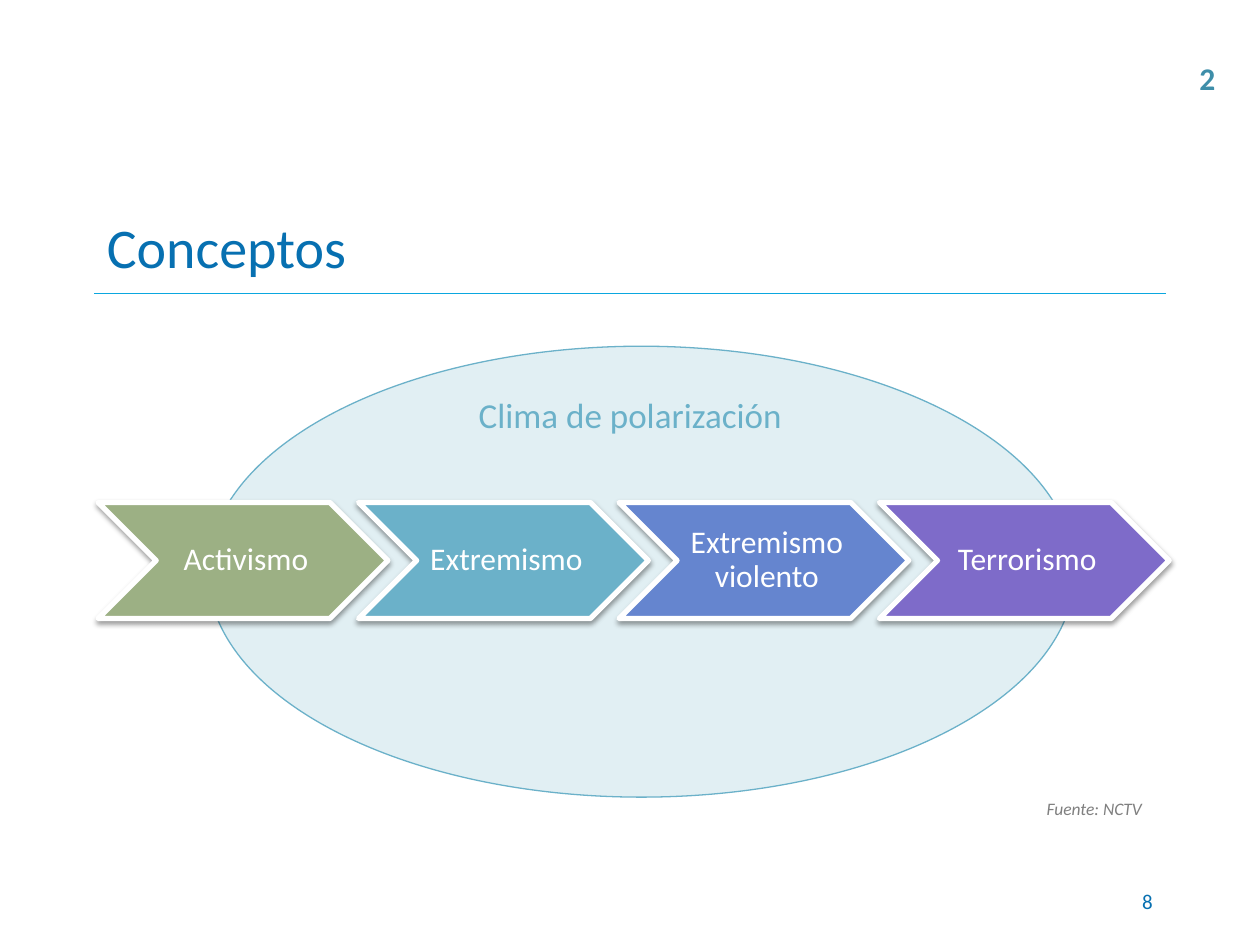
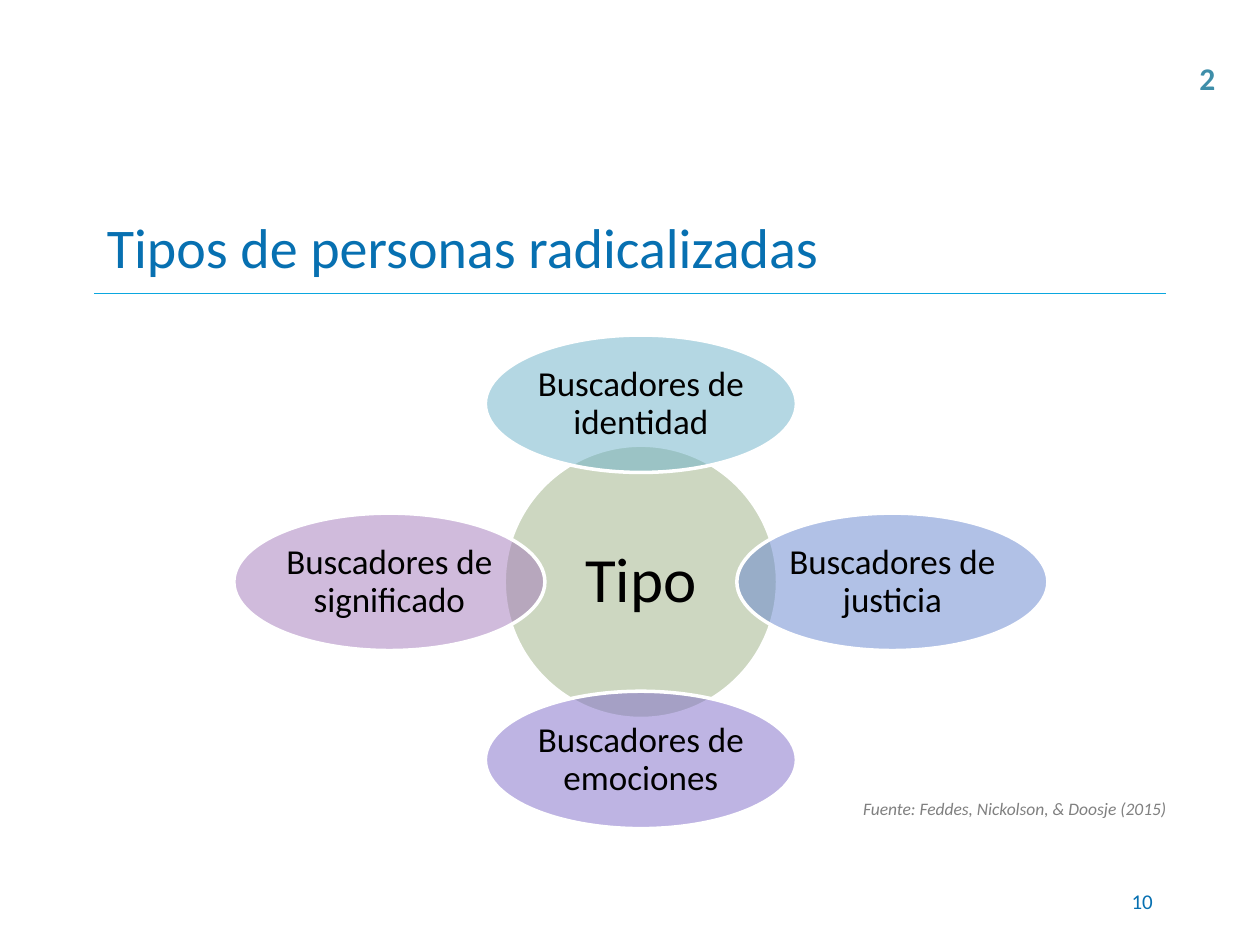
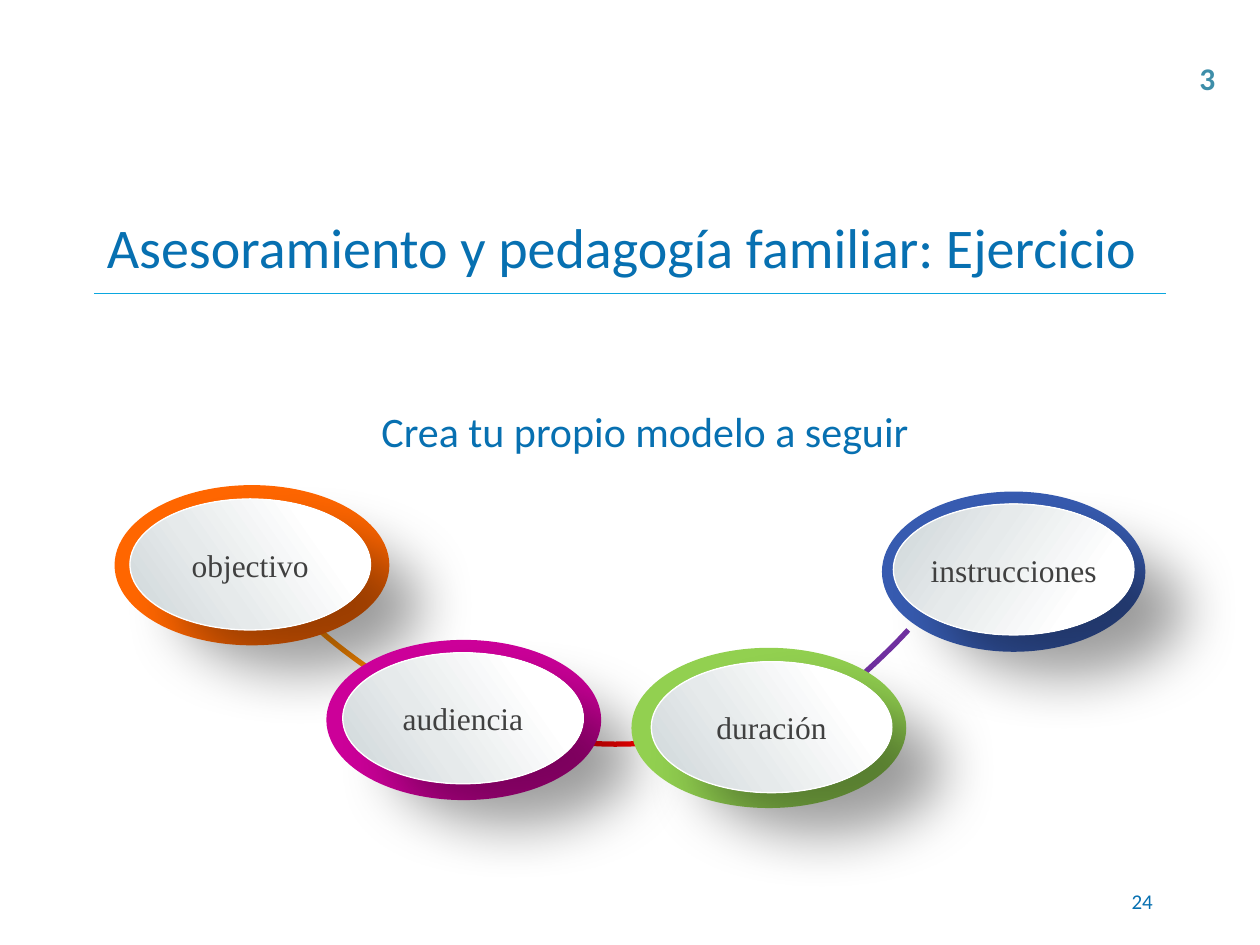
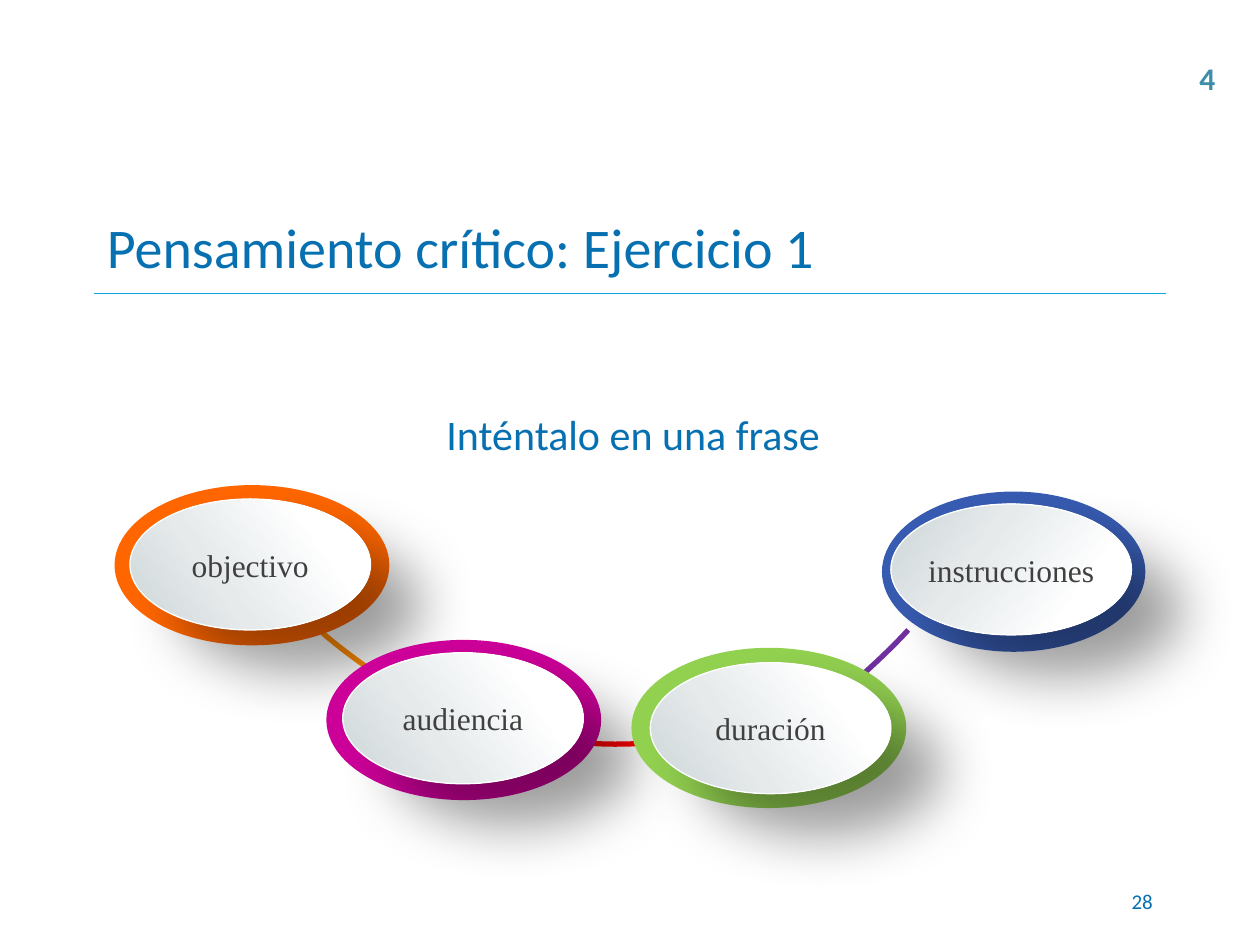
"""Builds four slides on concepts, types of radicalised people and two exercises."""
from lxml.etree import SubElement
from pptx import Presentation
from pptx.dml.color import RGBColor
from pptx.enum.shapes import MSO_CONNECTOR, MSO_SHAPE
from pptx.enum.text import MSO_ANCHOR, PP_ALIGN
from pptx.oxml.ns import qn
from pptx.util import Cm, Pt

TITLE_BLUE = RGBColor(0x07, 0x70, 0xB1)
RULE_BLUE = RGBColor(0x0B, 0xA7, 0xDF)
SECTION_BLUE = RGBColor(0x3E, 0x8E, 0xA9)
PALE_BLUE = RGBColor(0xC4, 0xE0, 0xE9)
GREEN = RGBColor(0x9C, 0xB0, 0x84)
TEAL = RGBColor(0x6B, 0xB1, 0xC9)
INDIGO = RGBColor(0x65, 0x85, 0xCF)
VIOLET = RGBColor(0x7E, 0x6B, 0xC9)
MAUVE = RGBColor(0xA3, 0x79, 0xBB)
WHITE = RGBColor(0xFF, 0xFF, 0xFF)
BLACK = RGBColor(0x00, 0x00, 0x00)
SOURCE_GREY = RGBColor(0x80, 0x80, 0x80)
LABEL_GREY = RGBColor(0x40, 0x40, 0x40)
SILVER = RGBColor(0xCD, 0xD5, 0xD8)
LIGHT_SILVER = RGBColor(0xE6, 0xEA, 0xEB)
NAVY = RGBColor(0x37, 0x5B, 0xB0)
ORANGE = RGBColor(0xFF, 0x66, 0x00)
MAGENTA = RGBColor(0xCC, 0x00, 0x99)
LIME = RGBColor(0x92, 0xD0, 0x50)
PURPLE = RGBColor(0x70, 0x30, 0xA0)
RED = RGBColor(0xFF, 0x00, 0x00)
AMBER = RGBColor(0xFF, 0x8A, 0x00)


def write(shape, text, size, color, align=PP_ALIGN.LEFT, font="Calibri", insets=None, spacing=None):
    """Put one formatted paragraph into a shape and return it."""
    frame = shape.text_frame
    frame.text = text
    if insets:
        frame.word_wrap = True
        frame.vertical_anchor = MSO_ANCHOR.MIDDLE
        frame.margin_left, frame.margin_top, frame.margin_right, frame.margin_bottom = map(Cm, insets)
    paragraph = frame.paragraphs[0]
    paragraph.alignment = align
    if spacing:
        paragraph.line_spacing = spacing
    run_font = paragraph.runs[0].font
    run_font.name, run_font.size, run_font.color.rgb = font, Pt(size), color
    return paragraph


def paint(shape, fill, line=None, width=0.75, opacity=None, shadow=None):
    """Set fill, outline and an optional (blur, distance, angle) shadow."""
    shape.shadow.inherit = False
    if fill is not None:
        shape.fill.solid()
        shape.fill.fore_color.rgb = fill
    if opacity:
        tone = shape._element.spPr.find(qn("a:solidFill")).find(qn("a:srgbClr"))
        SubElement(tone, qn("a:alpha"), val=str(opacity * 1000))
    if line is None:
        shape.line.fill.background()
    else:
        shape.line.color.rgb = line
        shape.line.width = Pt(width)
    if shadow:
        blur, distance, angle = shadow
        effects = shape._element.spPr.find(qn("a:effectLst"))
        outer = SubElement(effects, qn("a:outerShdw"), blurRad=str(Pt(blur)), dist=str(Pt(distance)),
                           dir=str(angle * 60000), algn="tl", rotWithShape="0")
        tone = SubElement(outer, qn("a:srgbClr"), val="000000")
        SubElement(tone, qn("a:alpha"), val="38000")


deck = Presentation()
deck.slide_width, deck.slide_height = Cm(25.4), Cm(19.05)
layout = deck.slide_layouts[5]
heading = layout.placeholders[0]
heading.left, heading.top, heading.width, heading.height = Cm(1.9), Cm(4.01), Cm(21.6), Cm(1.9)
heading.text_frame.vertical_anchor = MSO_ANCHOR.MIDDLE

slides = []
for title, section, number in [
    ("Conceptos", "2", "8"),
    ("Tipos de personas radicalizadas", "2", "10"),
    ("Asesoramiento y pedagogía familiar: Ejercicio", "3", "24"),
    ("Pensamiento crítico: Ejercicio 1", "4", "28"),
]:
    slide = deck.slides.add_slide(layout)
    write(slide.shapes.title, title, 32, TITLE_BLUE)
    page = slide.shapes.add_textbox(Cm(18.21), Cm(17.65), Cm(5.28), Cm(1.02))
    page.text_frame.vertical_anchor = MSO_ANCHOR.MIDDLE
    write(page, number, 12, TITLE_BLUE, PP_ALIGN.RIGHT)
    marker = slide.shapes.add_textbox(Cm(23.93), Cm(1.07), Cm(0.84), Cm(1.02))
    marker.text_frame.word_wrap = False
    write(marker, section, 18, SECTION_BLUE).runs[0].font.bold = True
    slides.append(slide)
concepts, types, family, critical = slides

rule = concepts.shapes.add_connector(MSO_CONNECTOR.STRAIGHT, Cm(1.9), Cm(5.92), Cm(23.5), Cm(5.92))
rule.line.color.rgb = RULE_BLUE
rule.line.width = Pt(0.75)
SubElement(rule._element.spPr, qn("a:effectLst"))
layout.shapes._spTree.append(rule._element)

for slide, source, left, width, wraps in [
    (concepts, "Fuente: NCTV", 20.85, 2.46, False),
    (types, "Fuente: Feddes, Nickolson, & Doosje (2015)", 17.15, 6.78, True),
]:
    citation = slide.shapes.add_textbox(Cm(left), Cm(15.96), Cm(width), Cm(0.69))
    citation.text_frame.word_wrap = wraps
    write(citation, source, 10, SOURCE_GREY).runs[0].font.italic = True

climate = concepts.shapes.add_shape(MSO_SHAPE.OVAL, Cm(4.19), Cm(6.98), Cm(17.48), Cm(9.09))
paint(climate, PALE_BLUE, TEAL, opacity=50)
climate_label = concepts.shapes.add_textbox(Cm(9.4), Cm(7.8), Cm(6.68), Cm(1.12))
climate_label.text_frame.word_wrap = False
write(climate_label, "Clima de polarización", 20, TEAL)

stages = [("Activismo", GREEN), ("Extremismo", TEAL), ("Extremismo violento", INDIGO), ("Terrorismo", VIOLET)]
for index, (name, color) in enumerate(stages):
    stage = concepts.shapes.add_shape(MSO_SHAPE.CHEVRON, Cm(1.98 + 5.25 * index), Cm(10.13), Cm(5.84), Cm(2.34))
    paint(stage, color, WHITE, 3, shadow=(3.1, 1.6, 90))
    write(stage, name, 18, WHITE, PP_ALIGN.CENTER, insets=(0.2, 0.08, 0.08, 0.08), spacing=0.9)

for name, color, column, row, width, height, size, inset in [
    ("Tipo", GREEN, 0, 0, 5.51, 5.51, 36, 0.13),
    ("Buscadores de identidad", TEAL, 0, -1, 6.27, 2.77, 20, 0.08),
    ("Buscadores de justicia", INDIGO, 1, 0, 6.27, 2.77, 20, 0.08),
    ("Buscadores de emociones", VIOLET, 0, 1, 6.27, 2.77, 20, 0.08),
    ("Buscadores de significado", MAUVE, -1, 0, 6.27, 2.77, 20, 0.08),
]:
    center_x, center_y = 12.92 + 5.07 * column, 11.73 + 3.59 * row
    seeker = types.shapes.add_shape(MSO_SHAPE.OVAL, Cm(center_x - width / 2), Cm(center_y - height / 2),
                                    Cm(width), Cm(height))
    paint(seeker, color, WHITE, 2, opacity=50)
    write(seeker, name, size, BLACK, PP_ALIGN.CENTER, insets=[inset] * 4, spacing=0.9)

arcs = [
    (PURPLE, (18.31, 12.7), (17.95, 13.1), (17.4, 13.6), (16.97, 13.97)),
    (PURPLE, (16.97, 13.95), (16.51, 14.25), (16.03, 14.5), (15.49, 14.71)),
    (RED, (11.4, 14.94), (12.2, 15.04), (13.1, 15.02), (13.92, 14.88)),
    (AMBER, (6.27, 12.55), (6.81, 13.06), (7.47, 13.52), (8.18, 13.97)),
]
bubbles = [
    ("instrucciones", NAVY, 17.78, 9.91, 5.31, 325),
    ("objectivo", ORANGE, 2.31, 9.78, 5.54, 35),
    ("audiencia", MAGENTA, 6.58, 12.9, 5.54, 35),
    ("duración", LIME, 12.73, 13.06, 5.54, 35),
]
family_cores = [(18.01, 10.16), (2.62, 10.06), (6.91, 13.16), (13.13, 13.34)]
critical_cores = [(17.96, 10.16), (2.62, 10.06), (6.91, 13.16), (13.11, 13.36)]
stops = [(0, SILVER), (37, LIGHT_SILVER), (77, WHITE), (100, WHITE)]

for slide, cores, prompt, left, top, width, align in [
    (family, family_cores, "Crea tu propio modelo a seguir", 7.44, 7.9, 12.78, PP_ALIGN.LEFT),
    (critical, critical_cores, "Inténtalo en una frase", 6.58, 7.95, 12.37, PP_ALIGN.CENTER),
]:
    for color, start, pull_start, pull_end, end in arcs:
        points = []
        for step in range(11):
            t = step / 10
            weights = (1 - t) ** 3, 3 * t * (1 - t) ** 2, 3 * t ** 2 * (1 - t), t ** 3
            corners = start, pull_start, pull_end, end
            points.append(tuple(Cm(sum(w * c[axis] for w, c in zip(weights, corners))) for axis in (0, 1)))
        outline = slide.shapes.build_freeform(*points[0])
        outline.add_line_segments(points[1:], close=False)
        arc = outline.convert_to_shape()
        arc.fill.background()
        paint(arc, None, color, 3)

    for (name, color, rim_left, rim_top, rim_width, angle), (core_left, core_top) in zip(bubbles, cores):
        rim = slide.shapes.add_shape(MSO_SHAPE.OVAL, Cm(rim_left), Cm(rim_top), Cm(rim_width), Cm(3.23))
        paint(rim, color)
        core = slide.shapes.add_shape(MSO_SHAPE.OVAL, Cm(core_left), Cm(core_top), Cm(4.85), Cm(2.64))
        core.fill.gradient()
        core.fill.gradient_angle = angle
        stop_list = core._element.spPr.find(qn("a:gradFill")).find(qn("a:gsLst"))
        stop_list.clear()
        for position, tone in stops:
            stop = SubElement(stop_list, qn("a:gs"), pos=str(position * 1000))
            SubElement(stop, qn("a:srgbClr"), val=str(tone))
        paint(core, None, WHITE, shadow=(33, 36.7, 39))
        write(core, name, 18, LABEL_GREY, PP_ALIGN.CENTER, "Times New Roman", insets=[0] * 4)

    instruction = slide.shapes.add_textbox(Cm(left), Cm(top), Cm(width), Cm(1.37))
    instruction.text_frame.word_wrap = True
    write(instruction, prompt, 24, TITLE_BLUE, align, spacing=1.15).space_after = Pt(6)

deck.save("out.pptx")
